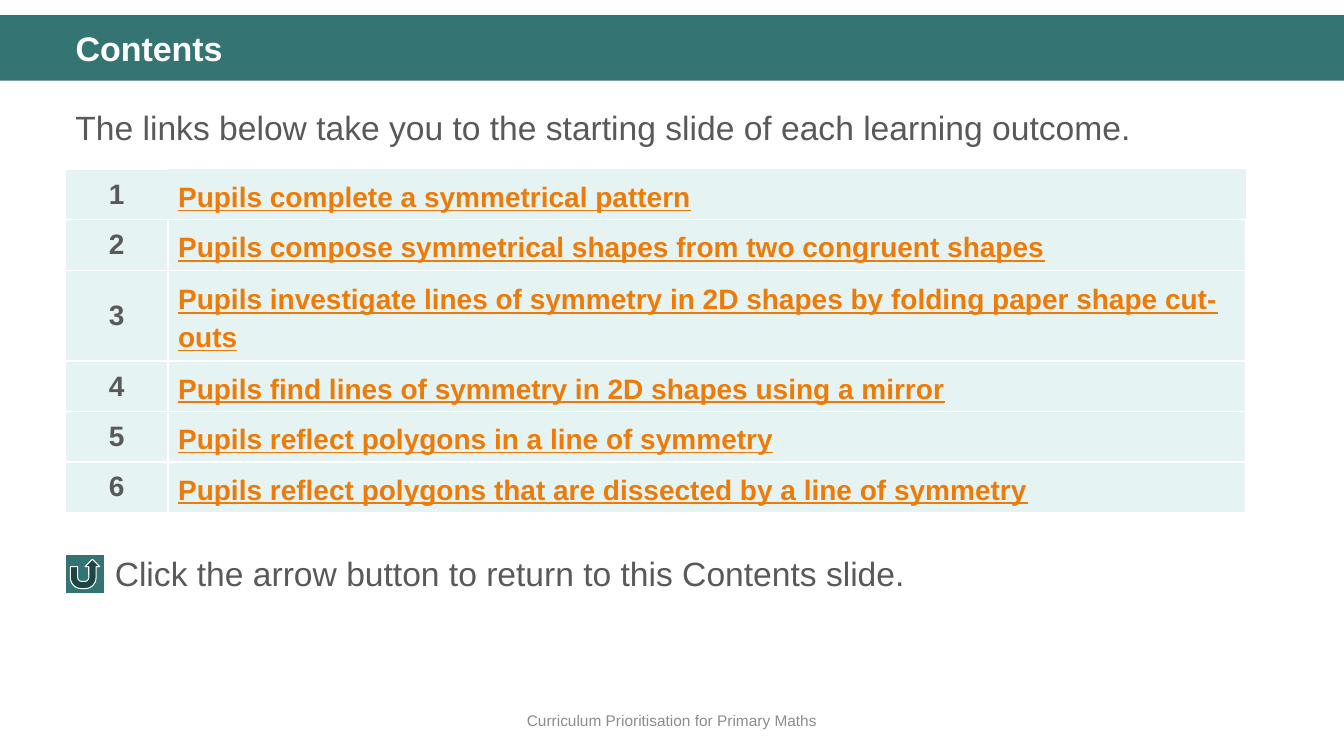
"""Build the contents slide of a primary maths deck on symmetry."""
from lxml import etree
from pptx import Presentation, util as u
from pptx.dml.color import RGBColor
from pptx.enum import shapes, text
from pptx.oxml import ns

TEAL = RGBColor(0x34, 0x75, 0x74)
BUTTON_TEAL = RGBColor(0x32, 0x74, 0x73)
PALE_TEAL = RGBColor(0xE5, 0xF3, 0xF2)
ORANGE = RGBColor(0xEE, 0x7B, 0x08)
DARK_GREY = RGBColor(0x59, 0x59, 0x59)
MID_GREY = RGBColor(0x8C, 0x8C, 0x8C)
WHITE = RGBColor(0xFF, 0xFF, 0xFF)

LEFT = 46.8
NOTE_FONT = {"size": u.Pt(24), "bold": False}
FOOTER_FONT = {"size": u.Pt(11), "bold": False}
TITLE_FONT = {"size": u.Pt(24.3), "bold": True}
NUMBER_FONT = {"size": u.Pt(20), "bold": True}
OUTCOME_FONT = {**NUMBER_FONT, "underline": True}
CENTRED = {"alignment": text.PP_ALIGN.CENTER}
SPACED = {"line_spacing": 1.2}

OUTCOMES = [
    "Pupils complete a symmetrical pattern",
    "Pupils compose symmetrical shapes from two congruent shapes",
    "Pupils investigate lines of symmetry in 2D shapes by folding paper shape cut-outs",
    "Pupils find lines of symmetry in 2D shapes using a mirror",
    "Pupils reflect polygons in a line of symmetry",
    "Pupils reflect polygons that are dissected by a line of symmetry",
]
TWO_LINE_ROW = 2


def points(*lengths):
    """Turn plain numbers into point lengths."""
    return [u.Pt(length) for length in lengths]


def apply(target, values):
    """Set each named attribute of the target."""
    for name, value in values.items():
        setattr(target, name, value)


def write(frame, wording, font, colour, layout):
    """Put one formatted paragraph into a text frame."""
    frame.text = wording
    paragraph = frame.paragraphs[0]
    apply(paragraph, layout)
    run_font = paragraph.runs[0].font
    apply(run_font, {"name": "Arial", **font})
    run_font.color.rgb = colour


def add_note(slide, place, wording, font, colour, layout, anchor=text.MSO_ANCHOR.TOP):
    """Add a wrapping line of text."""
    frame = slide.shapes.add_textbox(*points(*place)).text_frame
    apply(frame, {"word_wrap": True, "vertical_anchor": anchor})
    write(frame, wording, font, colour, layout)


def add_block(slide, kind, place, colour):
    """Add a filled preset shape without outline or shadow."""
    block = slide.shapes.add_shape(kind, *points(*place))
    block.shadow.inherit = False
    block.fill.solid()
    block.fill.fore_color.rgb = colour
    block.line.fill.background()
    return block


def set_borders(cell, sides):
    """Draw white lines on the given sides and none on the others."""
    properties = cell._tc.get_or_add_tcPr()
    for side in "LRTB":
        border = etree.SubElement(properties, ns.qn(f"a:ln{side}"), w=str(u.Pt(1)))
        if side in sides:
            fill = etree.SubElement(border, ns.qn("a:solidFill"))
            etree.SubElement(fill, ns.qn("a:srgbClr"), val=str(WHITE))
        else:
            etree.SubElement(border, ns.qn("a:noFill"))


def fill_cell(cell, wording, font, colour, layout, sides):
    """Format one table cell and write its text."""
    set_borders(cell, sides)
    cell.fill.solid()
    cell.fill.fore_color.rgb = PALE_TEAL
    cell.vertical_anchor = text.MSO_ANCHOR.MIDDLE
    write(cell.text_frame, wording, font, colour, layout)


def add_outcomes(slide):
    """Add the numbered table of learning outcomes."""
    place = points(LEFT, 121, 843.2, 230.5)
    table = slide.shapes.add_table(len(OUTCOMES), 2, *place).table
    apply(table, {"first_row": False, "horz_banding": False})
    for column, width in zip(table.columns, points(73.2, 770)):
        column.width = width
    for index, outcome in enumerate(OUTCOMES):
        table.rows[index].height = u.Pt(60.5 if index == TWO_LINE_ROW else 34)
        number_sides, outcome_sides = ("LRTB", "LRTB") if index else ("LTB", "B")
        fill_cell(table.cell(index, 0), str(index + 1), NUMBER_FONT, DARK_GREY,
                  CENTRED, number_sides)
        fill_cell(table.cell(index, 1), outcome, OUTCOME_FONT, ORANGE,
                  SPACED, outcome_sides)


def add_title(slide, wording):
    """Place the title in front of its band."""
    title = slide.shapes.title
    apply(title, dict(zip(("left", "top", "width", "height"),
                          points(LEFT, 19.4, 877, 33.8))))
    apply(title.text_frame, {"auto_size": text.MSO_AUTO_SIZE.NONE,
                             "vertical_anchor": text.MSO_ANCHOR.TOP})
    write(title.text_frame, wording, TITLE_FONT, WHITE,
          {"alignment": text.PP_ALIGN.LEFT, "line_spacing": 0.9})
    slide.shapes._spTree.append(title._element)


def main():
    """Build and save the slide."""
    deck = Presentation()
    apply(deck, {"slide_width": u.Pt(960), "slide_height": u.Pt(540)})
    slide = deck.slides.add_slide(deck.slide_layouts[5])
    add_block(slide, shapes.MSO_SHAPE.RECTANGLE, (0, 10.8, 960, 46.8), TEAL)
    add_note(slide, (0, 500.4, 960, 28.8), "Curriculum Prioritisation for Primary Maths",
             FOOTER_FONT, MID_GREY, CENTRED, text.MSO_ANCHOR.MIDDLE)
    add_note(slide, (LEFT, 67, 877, 252.7),
             "The links below take you to the starting slide of each learning outcome.",
             NOTE_FONT, DARK_GREY, SPACED)
    add_outcomes(slide)
    button = add_block(slide, shapes.MSO_SHAPE.ACTION_BUTTON_RETURN,
                       (LEFT, 396, 28, 28), BUTTON_TEAL)
    button.line.color.rgb = WHITE
    button.line.width = u.Pt(0.75)
    add_note(slide, (74.9, 391.7, 815, 36),
             "Click the arrow button to return to this Contents slide.",
             NOTE_FONT, DARK_GREY, {})
    add_title(slide, "Contents")
    deck.save("out.pptx")


if __name__ == "__main__":
    main()
